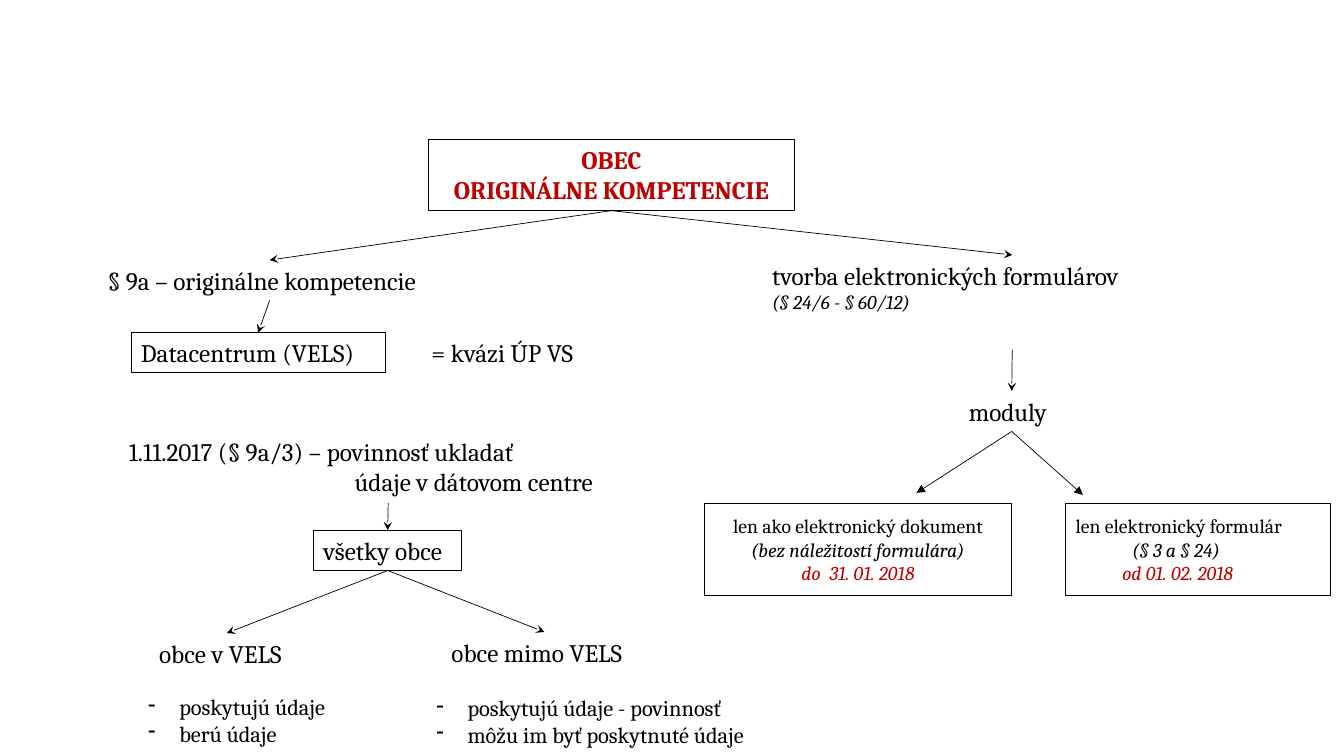
"""Build the slide on the original competences of a municipality."""
from dataclasses import dataclass
from typing import Optional

from lxml.etree import SubElement
from pptx import Presentation
from pptx.dml.color import RGBColor
from pptx.enum.shapes import MSO_CONNECTOR, MSO_SHAPE
from pptx.enum.text import MSO_ANCHOR, PP_ALIGN
from pptx.oxml.ns import qn
from pptx.util import Inches, Pt

BLACK, RED, WHITE = "000000", "C00000", "FFFFFF"
TOP, BOTTOM = 0, 2
BULLET_INDENT = 0.31


@dataclass(frozen=True)
class Line:
    text: str
    size: int = 18
    color: str = BLACK
    bold: bool = False
    italic: bool = False
    align: PP_ALIGN = PP_ALIGN.LEFT
    indent: float = 0
    bullet: bool = False
    italic_tail: str = ""


@dataclass(frozen=True)
class Node:
    left: float
    top: float
    width: float
    height: float
    lines: tuple[Line, ...]
    border: float = 0
    fill: Optional[str] = None


@dataclass(frozen=True)
class Arrow:
    source: str
    target: Optional[str] = None
    end: tuple[float, float] = (0, 0)
    head: str = "stealth"


def heading(text: str) -> Line:
    return Line(text, color=RED, bold=True, align=PP_ALIGN.CENTER)


def dash(text: str) -> Line:
    return Line(text, 16, indent=BULLET_INDENT, bullet=True)


NODES = {
    "municipality": Node(4.25, 1.38, 3.63, 0.71, (
        heading("OBEC"), heading("ORIGINÁLNE KOMPETENCIE")), 0.75),
    "forms": Node(7.56, 2.53, 4.96, 0.94, (
        Line("tvorba elektronických formulárov"),
        Line("(§ 24/6 - § 60/12)", 14, italic=True))),
    "competences": Node(0.97, 2.58, 3.41, 0.4, (
        Line("§ 9a – originálne kompetencie"),)),
    "datacentre": Node(1.3, 3.3, 2.52, 0.4, (Line("Datacentrum (VELS)"),), 0.75),
    "duty": Node(1.18, 4.28, 5.34, 0.71, (
        Line("1.11.2017 (§ 9a/3) – povinnosť ukladať"),
        Line("údaje v dátovom centre", indent=2.24))),
    "inside": Node(1.48, 6.28, 1.54, 0.4, (Line("obce v VELS"),)),
    "outside": Node(4.38, 6.27, 2.04, 0.4, (Line("obce mimo VELS"),)),
    "inside_data": Node(1.37, 6.83, 2.05, 0.64, (
        dash("poskytujú údaje"), dash("berú údaje"))),
    "outside_data": Node(4.23, 6.84, 3.44, 0.64, (
        dash("poskytujú údaje - povinnosť"), dash("môžu im byť poskytnuté údaje"))),
    "modules": Node(9.51, 3.88, 1.05, 0.4, (Line("moduly"),)),
    "portal": Node(4.18, 3.3, 1.71, 0.4, (Line("= kvázi ÚP VS"),)),
    "everyone": Node(3.11, 5.26, 1.47, 0.4, (Line("všetky obce"),), 0.75),
    "document": Node(6.99, 4.99, 3.04, 0.92, (
        Line("len ako elektronický dokument ", 14, align=PP_ALIGN.CENTER,
             italic_tail="(bez náležitostí formulára)"),
        Line("do  31. 01. 2018", 14, RED, italic=True, align=PP_ALIGN.CENTER)),
        0.5, WHITE),
    "form": Node(10.57, 4.99, 2.62, 0.92, (
        Line("len elektronický formulár", 14, align=PP_ALIGN.JUSTIFY),
        Line("(§ 3 a § 24)", 14, italic=True, align=PP_ALIGN.JUSTIFY, indent=0.56),
        Line("od 01. 02. 2018", 14, RED, italic=True, align=PP_ALIGN.JUSTIFY,
             indent=0.46)), 0.5, WHITE),
}

ARROWS = (
    Arrow("forms", "modules"),
    Arrow("municipality", "competences"),
    Arrow("municipality", "forms"),
    Arrow("competences", "datacentre"),
    Arrow("duty", "everyone"),
    Arrow("everyone", "inside"),
    Arrow("everyone", "outside"),
    Arrow("modules", end=(9.09, 4.89), head="triangle"),
    Arrow("modules", end=(10.74, 4.91), head="triangle"),
)


def rgb(color: str) -> RGBColor:
    return RGBColor.from_string(color)


def write_line(paragraph, line: Line) -> None:
    paragraph.text = line.text
    paragraph.alignment = line.align
    properties = paragraph._p.get_or_add_pPr()
    if line.indent:
        properties.set("marL", str(Inches(line.indent)))
    if line.bullet:
        properties.set("indent", str(-Inches(line.indent)))
        SubElement(properties, qn("a:buChar")).set("char", "-")
    if line.italic_tail:
        paragraph.add_run().text = line.italic_tail
    for index, run in enumerate(paragraph.runs):
        run.font.name = "Cambria"
        run.font.size = Pt(line.size)
        run.font.bold = line.bold
        run.font.italic = line.italic or index > 0
        run.font.color.rgb = rgb(line.color)


def draw_node(shapes, node: Node):
    place = [Inches(v) for v in (node.left, node.top, node.width, node.height)]
    if node.border:
        box = shapes.add_shape(MSO_SHAPE.RECTANGLE, *place)
        box.shadow.inherit = False
        box.line.color.rgb = rgb(BLACK)
        box.line.width = Pt(node.border)
        if node.fill:
            box.fill.solid()
            box.fill.fore_color.rgb = rgb(node.fill)
        else:
            box.fill.background()
    else:
        box = shapes.add_textbox(*place)
    frame = box.text_frame
    frame.word_wrap = True
    frame.vertical_anchor = MSO_ANCHOR.MIDDLE if node.fill else MSO_ANCHOR.TOP
    frame.text = "\n".join(line.text for line in node.lines)
    for paragraph, line in zip(frame.paragraphs, node.lines):
        write_line(paragraph, line)
    return box


def draw_arrow(shapes, arrow: Arrow, boxes: dict) -> None:
    end_x, end_y = (Inches(v) for v in arrow.end)
    connector = shapes.add_connector(MSO_CONNECTOR.STRAIGHT, 0, 0, end_x, end_y)
    connector.begin_connect(boxes[arrow.source], BOTTOM)
    if arrow.target:
        connector.end_connect(boxes[arrow.target], TOP)
    connector.line.color.rgb = rgb(BLACK)
    connector.line.width = Pt(0.5)
    outline = connector.line._get_or_add_ln()
    SubElement(outline, qn("a:tailEnd")).set("type", arrow.head)
    SubElement(connector._element.spPr, qn("a:effectLst"))


def main() -> None:
    presentation = Presentation()
    presentation.slide_width = Inches(13.33)
    presentation.slide_height = Inches(7.5)
    shapes = presentation.slides.add_slide(presentation.slide_layouts[6]).shapes
    boxes = {name: draw_node(shapes, node) for name, node in NODES.items()}
    for arrow in ARROWS:
        draw_arrow(shapes, arrow, boxes)
    presentation.save("out.pptx")


if __name__ == "__main__":
    main()
